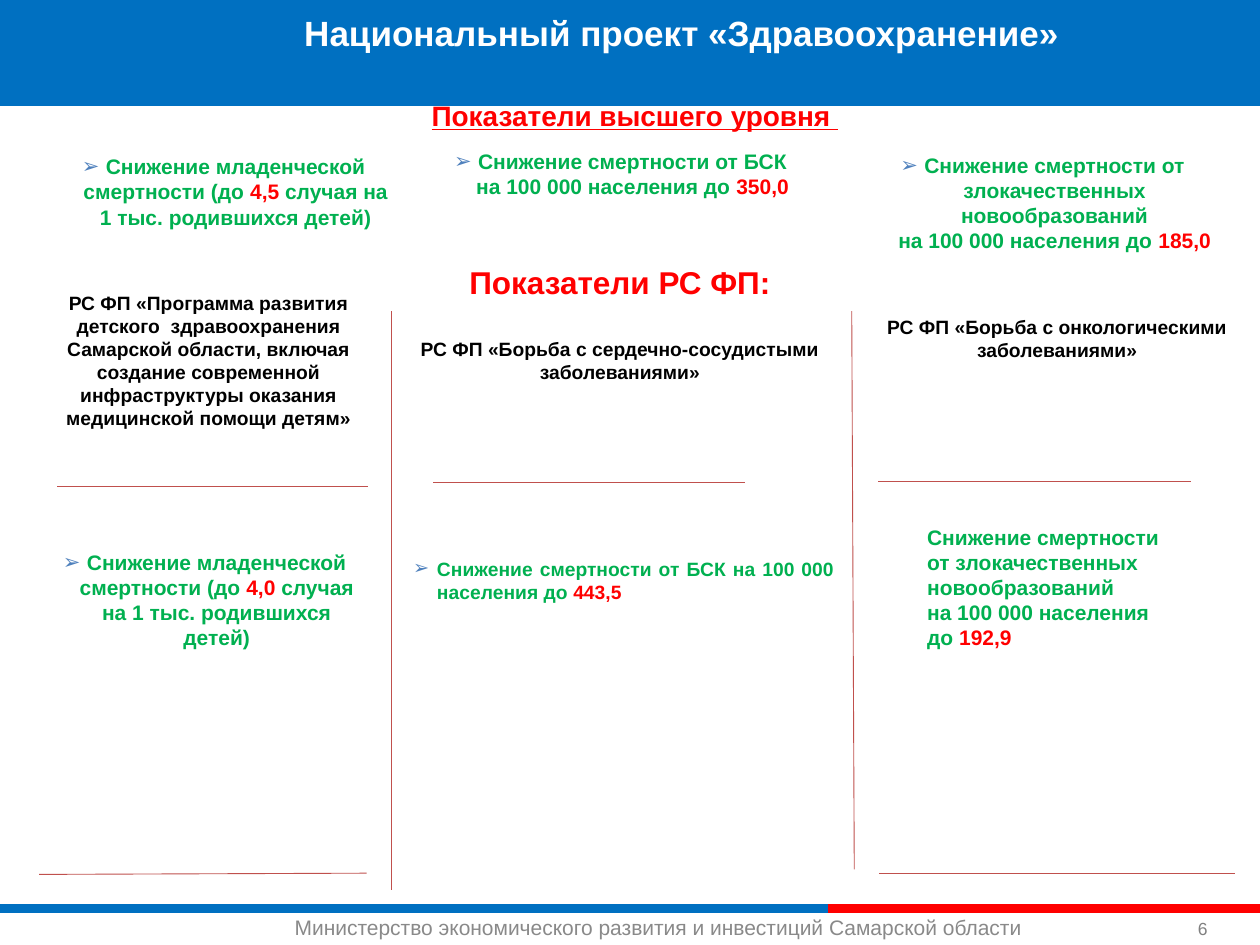
from lxml import etree
from pptx import Presentation
from pptx.dml.color import RGBColor
from pptx.enum.shapes import MSO_CONNECTOR as Conn, MSO_SHAPE as Shape
from pptx.enum.text import MSO_ANCHOR as Anchor, PP_ALIGN as Align
from pptx.oxml.ns import qn
from pptx.util import Inches, Pt

BLUE = RGBColor(0x00, 0x70, 0xC1)
RED = RGBColor(0xFF, 0x00, 0x00)
GREEN = RGBColor(0x00, 0xB0, 0x50)
BLACK = RGBColor(0x00, 0x00, 0x00)
WHITE = RGBColor(0xFF, 0xFF, 0xFF)
GREY = RGBColor(0x89, 0x89, 0x89)
PAGE_GREY = RGBColor(0x80, 0x80, 0x80)
RULE = RGBColor(0xC0, 0x50, 0x4D)
BULLET = "4F81BD"

# Left, top, width, height, text of each federal-project heading
PROJECTS = [
    (0.2, 2.26, 2.91, 1.21,
     "РС ФП «Программа развития детского  здравоохранения Самарской области, "
     "включая создание современной инфраструктуры оказания медицинской помощи детям»"),
    (3.14, 2.63, 3.56, 0.47, "РС ФП «Борьба с сердечно-сосудистыми заболеваниями»"),
    (6.78, 2.45, 3.22, 0.47, "РС ФП «Борьба с онкологическими заболеваниями»"),
]

BSK = "Снижение смертности от БСК на 100 000 населения до "
INFANT = "Снижение младенческой смертности (до "
CANCER = "Снижение смертности от злокачественных новообразований\vна 100 000 населения до "

# Box, text before the value, value, text after it, format
INDICATORS = [
    ((0.12, 1.17, 3.31, 0.71), INFANT, "4,5", " случая на\v1 тыс. родившихся детей)", {}),
    ((3.43, 1.13, 2.99, 0.5), BSK, "350,0", "", {}),
    ((6.76, 1.16, 3.03, 0.91), CANCER, "185,0", "", {}),
    ((0.32, 4.31, 2.61, 0.91), INFANT, "4,0 ", "случая на 1 тыс. родившихся детей)", {}),
    ((3.18, 4.37, 3.54, 0.47), BSK, "443,5", "", {"size": 11, "align": Align.JUSTIFY}),
    ((7.26, 4.11, 2.19, 1.11), CANCER, "192,9", "", {"align": Align.LEFT, "bullet": False}),
]

# Start x, start y, end x, end y
RULES = [
    (3.11, 2.47, 3.11, 7.06),
    (6.76, 2.47, 6.78, 6.9),
    (2.92, 3.86, 0.45, 3.86),
    (5.91, 3.83, 3.44, 3.83),
    (9.45, 3.82, 6.97, 3.82),
    (2.91, 6.93, 0.31, 6.94),
    (9.8, 6.93, 6.98, 6.93),
]


def add_bullet(p):
    pPr = p._p.get_or_add_pPr()
    pPr.set("marL", str(Inches(0.19)))
    pPr.set("indent", str(-Inches(0.19)))
    color = etree.SubElement(pPr, qn("a:buClr"))
    etree.SubElement(color, qn("a:srgbClr")).set("val", BULLET)
    etree.SubElement(pPr, qn("a:buFont")).set("typeface", "Arial")
    etree.SubElement(pPr, qn("a:buChar")).set("char", "➢")


def add_text(s, box, parts, size, align=Align.CENTER, bullet=False,
             anchor=Anchor.TOP, bold=True, underline=None):
    """Add a text box; parts is a list of (text, colour) runs."""
    tf = s.shapes.add_textbox(*map(Inches, box)).text_frame
    tf.word_wrap = True
    tf.vertical_anchor = anchor
    p = tf.paragraphs[0]
    p.alignment = align
    if bullet:
        add_bullet(p)
    font_format = {"name": "Arial", "size": Pt(size), "bold": bold, "underline": underline}
    for text, color in parts:
        # A vertical tab marks a line break between runs
        for i, line in enumerate(text.split("\v")):
            if i:
                p.add_line_break()
            r = p.add_run()
            r.text = line
            for name, value in font_format.items():
                setattr(r.font, name, value)
            r.font.color.rgb = color


def add_indicator(s, box, before, value, after, style):
    parts = [(before, GREEN), (value, RED)]
    if after:
        parts.append((after, GREEN))
    add_text(s, box, parts, **{"size": 12, "bullet": True, **style})


def add_line(s, points, color=RULE, width=0.5):
    line = s.shapes.add_connector(Conn.STRAIGHT, *map(Inches, points))
    line.line.color.rgb = color
    line.line.width = Pt(width)
    etree.SubElement(line._element.spPr, qn("a:effectLst"))


def add_band(s):
    sp = s.shapes.add_shape(Shape.RECTANGLE, 0, 0, Inches(10), Inches(0.84))
    sp.shadow.inherit = False
    sp.fill.solid()
    sp.fill.fore_color.rgb = BLUE
    sp.line.fill.background()


def main():
    prs = Presentation()
    prs.slide_width, prs.slide_height = Inches(10), Inches(7.5)
    s = prs.slides.add_slide(prs.slide_layouts[6])

    # Header band and footer
    add_band(s)
    add_line(s, (0, 7.21, 6.57, 7.21), BLUE, 5)
    add_line(s, (6.57, 7.21, 10, 7.21), RED, 5)
    add_text(s, (2.24, 7.21, 6.54, 0.3),
             [("Министерство экономического развития и инвестиций Самарской области", GREY)],
             12, Align.LEFT, bold=False)
    add_text(s, (9.41, 7.1, 0.56, 0.4), [("6", PAGE_GREY)], 10, Align.LEFT,
             anchor=Anchor.BOTTOM, bold=False)

    # Title and section headings
    add_text(s, (0.85, 0.04, 9.12, 0.44),
             [("Национальный проект «Здравоохранение»", WHITE)], 20)
    add_text(s, (-0.12, 0.73, 10.32, 0.39),
             [("Показатели высшего уровня ", RED)], 16, underline=True)
    add_text(s, (2.41, 2.04, 5.02, 0.4), [("Показатели РС ФП:", RED)], 18)

    # Three columns: projects, indicators and dividing lines
    for *box, text in PROJECTS:
        add_text(s, box, [(text, BLACK)], 11)
    for indicator in INDICATORS:
        add_indicator(s, *indicator)
    for points in RULES:
        add_line(s, points)

    prs.save("out.pptx")


if __name__ == "__main__":
    main()
